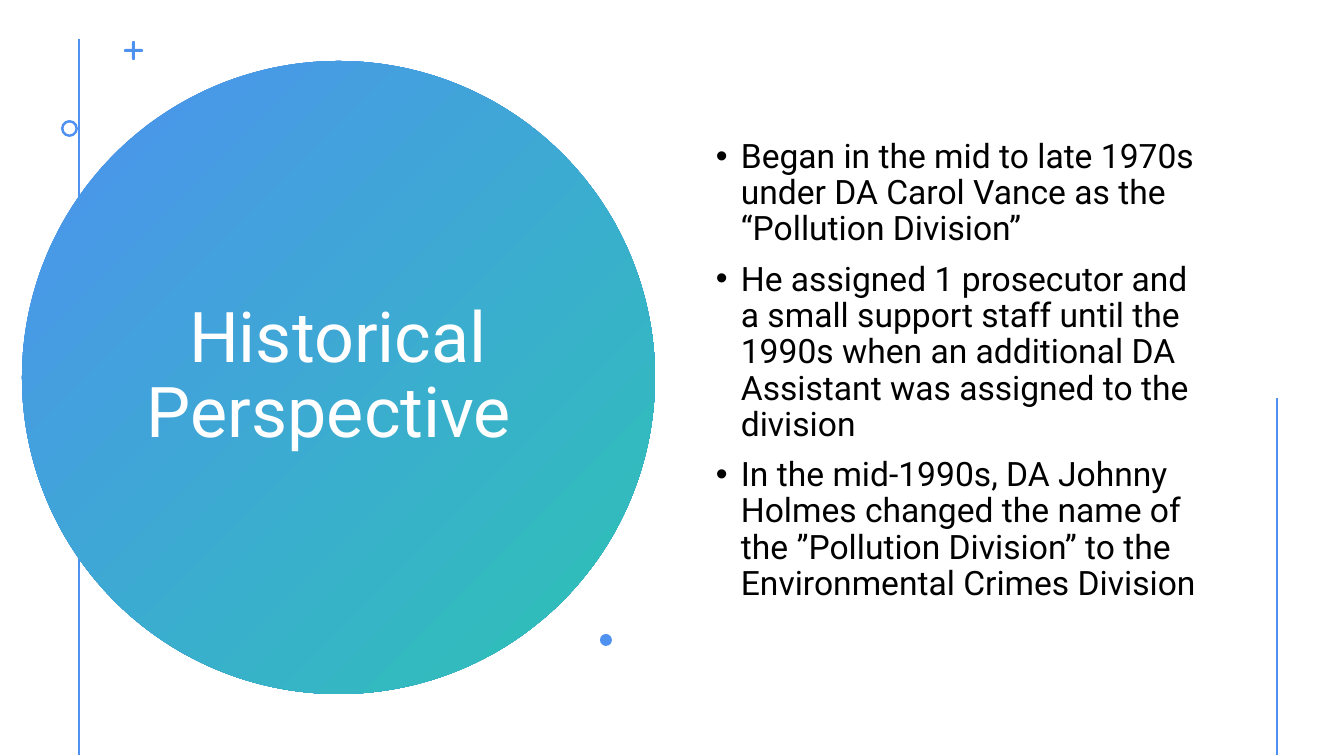
from lxml import etree
from pptx import Presentation
from pptx.dml.color import RGBColor
from pptx.enum.shapes import MSO_CONNECTOR, MSO_SHAPE
from pptx.enum.text import MSO_ANCHOR, PP_ALIGN
from pptx.oxml.ns import qn
from pptx.util import Pt

EMU_PER_PX = 914400 / 100.8
OVAL = MSO_SHAPE.OVAL
DONUT = MSO_SHAPE.DONUT
ROUNDED = MSO_SHAPE.ROUNDED_RECTANGLE
STRAIGHT = MSO_CONNECTOR.STRAIGHT
MIDDLE = MSO_ANCHOR.MIDDLE
LEFT, CENTER = PP_ALIGN.LEFT, PP_ALIGN.CENTER

FONT = "Roboto"
BLUE, TEAL, WHITE, BLACK = "4E91F0", "2CC3B4", "FFFFFF", "000000"
TITLE = "Historical Perspective "
HISTORY = [
    "Began in the mid to late 1970s under DA Carol Vance as the “Pollution Division”",
    "He assigned 1 prosecutor and a small support staff until the 1990s when an "
    "additional DA Assistant was assigned to the division",
    "In the mid-1990s, DA Johnny Holmes changed the name of the ”Pollution Division” "
    "to the Environmental Crimes Division",
]


def px(length):
    return round(length * EMU_PER_PX)


def color(hex_string):
    return RGBColor.from_string(hex_string)


def add_rule(page, x, top, bottom):
    """Draw a vertical accent line."""
    rule = page.shapes.add_connector(STRAIGHT, px(x), px(top), px(x), px(bottom))
    rule.line.color.rgb = color(BLUE)
    rule.line.width = Pt(2)
    etree.SubElement(rule._element.spPr, qn("a:effectLst"))


def add_accent(page, kind, left, top, width, height, adjustment=None):
    accent = page.shapes.add_shape(kind, px(left), px(top), px(width), px(height))
    accent.shadow.inherit = False
    accent.line.fill.background()
    accent.fill.solid()
    accent.fill.fore_color.rgb = color(BLUE)
    if adjustment is not None:
        accent.adjustments[0] = adjustment
    return accent


def add_plus(page, left, top, size, bar):
    inset = (size - bar) // 2
    add_accent(page, ROUNDED, left, top + inset, size, bar, 0.5)
    add_accent(page, ROUNDED, left + inset, top, bar, size, 0.5)


def add_text(page, left, top, width, height, texts, size, hex_string, align, bulleted=False):
    box = page.shapes.add_textbox(px(left), px(top), px(width), px(height))
    frame = box.text_frame
    frame.word_wrap = True
    frame.vertical_anchor = MIDDLE
    for index, text in enumerate(texts):
        para = frame.add_paragraph() if index else frame.paragraphs[0]
        para.alignment = align
        para.line_spacing = 0.9
        para.space_before = Pt(10 if index else 0)
        if bulleted:
            properties = para._p.get_or_add_pPr()
            properties.set("marL", str(px(25)))
            properties.set("indent", str(-px(25)))
            etree.SubElement(properties, qn("a:buFont"), typeface="Arial")
            etree.SubElement(properties, qn("a:buChar"), char="•")
        span = para.add_run()
        span.text = text
        span.font.name = FONT
        span.font.size = Pt(size)
        span.font.color.rgb = color(hex_string)


def add_title_circle(page, left, top, size):
    add_rule(page, left + 57, top - 22, top + 694)
    circle = add_accent(page, OVAL, left, top, size, size)
    circle.fill.gradient()
    circle.fill.gradient_angle = 315
    for stop, hex_string in zip(circle.fill.gradient_stops, (BLUE, TEAL)):
        stop.color.rgb = color(hex_string)
    add_text(page, left + 115, top + 81, 402, 471, [TITLE], 50, WHITE, CENTER)
    add_plus(page, left + 102, top - 20, 19, 3)
    add_accent(page, DONUT, left + 39, top + 59, 17, 17, 0.15)
    add_accent(page, OVAL, left + 578, top + 573, 12, 12)


def add_history(page, left, top, width, height):
    add_text(page, left, top, width, height, HISTORY, 24, BLACK, LEFT, bulleted=True)
    add_rule(page, left + width + 55, top + 356, top + height + 55)


def main():
    deck = Presentation()
    deck.slide_width, deck.slide_height = px(1344), px(756)
    page = deck.slides.add_slide(deck.slide_layouts[6])
    add_title_circle(page, 22, 61, 633)
    add_history(page, 706, 42, 516, 658)
    deck.save("out.pptx")


if __name__ == "__main__":
    main()
